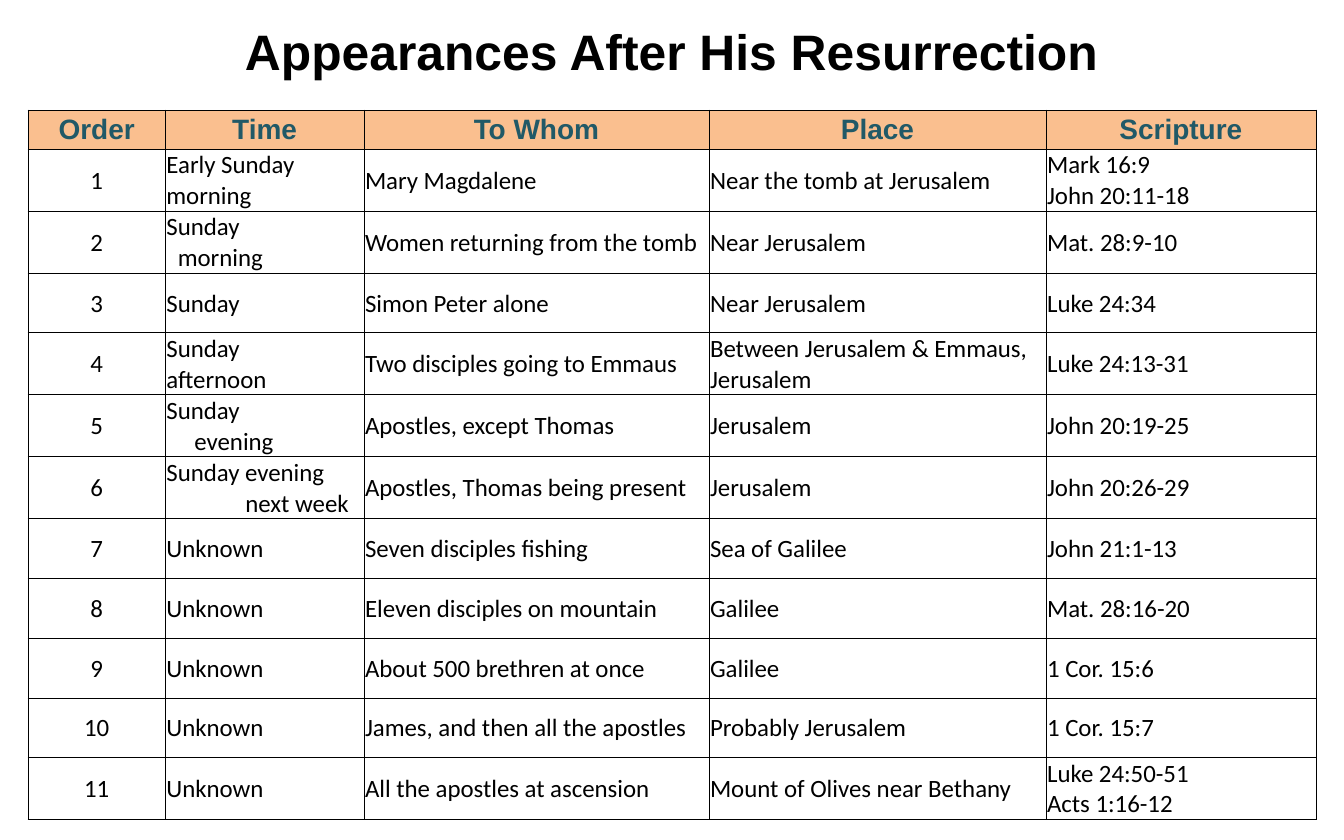
"""Build a slide with a table of the appearances after the resurrection."""
from lxml.etree import SubElement
from pptx import Presentation
from pptx.dml.color import RGBColor
from pptx.enum.text import MSO_ANCHOR, PP_ALIGN
from pptx.oxml.ns import qn
from pptx.util import Pt

HEADINGS = ["Order", "Time", "To Whom", "Place", "Scripture"]
APPEARANCES = [
    ["Early Sunday morning", "Mary Magdalene", "Near the tomb at Jerusalem", "Mark 16:9\nJohn 20:11-18"],
    ["Sunday\nmorning", "Women returning from the tomb", "Near Jerusalem", "Mat. 28:9-10"],
    ["Sunday", "Simon Peter alone", "Near Jerusalem", "Luke 24:34"],
    ["Sunday\nafternoon", "Two disciples going to Emmaus", "Between Jerusalem & Emmaus, Jerusalem", "Luke 24:13-31"],
    ["Sunday\nevening", "Apostles, except Thomas", "Jerusalem", "John 20:19-25"],
    ["Sunday evening\nnext week", "Apostles, Thomas being present", "Jerusalem", "John 20:26-29"],
    ["Unknown", "Seven disciples fishing", "Sea of Galilee", "John 21:1-13"],
    ["Unknown", "Eleven disciples on mountain", "Galilee", "Mat. 28:16-20"],
    ["Unknown", "About 500 brethren at once", "Galilee", "1 Cor. 15:6"],
    ["Unknown", "James, and then all the apostles", "Probably Jerusalem", "1 Cor. 15:7"],
    ["Unknown", "All the apostles at ascension", "Mount of Olives near Bethany", "Luke 24:50-51\nActs 1:16-12"],
]
TIME_INDENTS = {"morning": 7.3, "evening": 18, "next week": 50.8}
COLUMN_WIDTHS = [88.3, 127.7, 221.8, 216.7, 173.5]
ROW_HEIGHTS = [37.5, 18.9, 25.1] + [38.4] * len(APPEARANCES)
NO_STYLE = "{2D5ABB26-0587-4C30-8999-92F81FD0307C}"


def fill_cell(cell, text, font_name, size, color, bold, centered):
    cell.text_frame.text = text
    for paragraph in cell.text_frame.paragraphs:
        paragraph.alignment = PP_ALIGN.CENTER if centered else PP_ALIGN.LEFT
        for run in paragraph.runs:
            run.font.name = font_name
            run.font.size = Pt(size)
            run.font.bold = bold
            run.font.color.rgb = RGBColor.from_string(color)


def add_borders(cell, sides):
    properties = cell._tc.get_or_add_tcPr()
    for side in sides:
        line = SubElement(properties, qn(f"a:ln{side}"), w=str(Pt(0.5)))
        SubElement(SubElement(line, qn("a:solidFill")), qn("a:srgbClr"), val="000000")


presentation = Presentation()
presentation.slide_width, presentation.slide_height = Pt(864), Pt(540)
slide = presentation.slides.add_slide(presentation.slide_layouts[6])

appearances = slide.shapes.add_table(
    len(ROW_HEIGHTS), len(HEADINGS), Pt(18), Pt(14.4), Pt(sum(COLUMN_WIDTHS)), Pt(sum(ROW_HEIGHTS))
).table
appearances.first_row = appearances.horz_banding = False
appearances._tbl.tblPr.find(qn("a:tableStyleId")).text = NO_STYLE
for column, width in zip(appearances.columns, COLUMN_WIDTHS):
    column.width = Pt(width)
for row, height in zip(appearances.rows, ROW_HEIGHTS):
    row.height = Pt(height)

for row_index, row in enumerate(appearances.rows):
    for column_index, cell in enumerate(row.cells):
        cell.margin_left = cell.margin_right = cell.margin_top = Pt(0.72)
        cell.margin_bottom = Pt(0)
        cell.vertical_anchor = MSO_ANCHOR.MIDDLE if row_index else MSO_ANCHOR.BOTTOM
        if row_index >= 2:
            add_borders(cell, "LRTB")
        elif row_index == 1:
            add_borders(cell, "B")
        cell.fill.background()
        if row_index < 2:
            SubElement(cell.text_frame.paragraphs[0]._p, qn("a:endParaRPr"), sz="1200")

title = appearances.cell(0, 0)
title.merge(appearances.cell(0, len(HEADINGS) - 1))
fill_cell(title, "Appearances After His Resurrection", "Arial", 36, "000000", True, True)
for run in title.text_frame.paragraphs[0].runs:
    run.font.size = Pt(32)

for column_index, heading in enumerate(HEADINGS):
    cell = appearances.cell(2, column_index)
    fill_cell(cell, heading, "Arial", 18, "215967", True, True)
    cell.fill.solid()
    cell.fill.fore_color.rgb = RGBColor.from_string("FABF8F")

for order, details in enumerate(APPEARANCES, start=1):
    for column_index, text in enumerate([str(order)] + details):
        cell = appearances.cell(order + 2, column_index)
        fill_cell(cell, text, "Calibri", 16, "000000", False, column_index == 0)
        for paragraph in cell.text_frame.paragraphs:
            if paragraph.text in TIME_INDENTS:
                paragraph._p.get_or_add_pPr().set("marL", str(Pt(TIME_INDENTS[paragraph.text])))

presentation.save("out.pptx")
